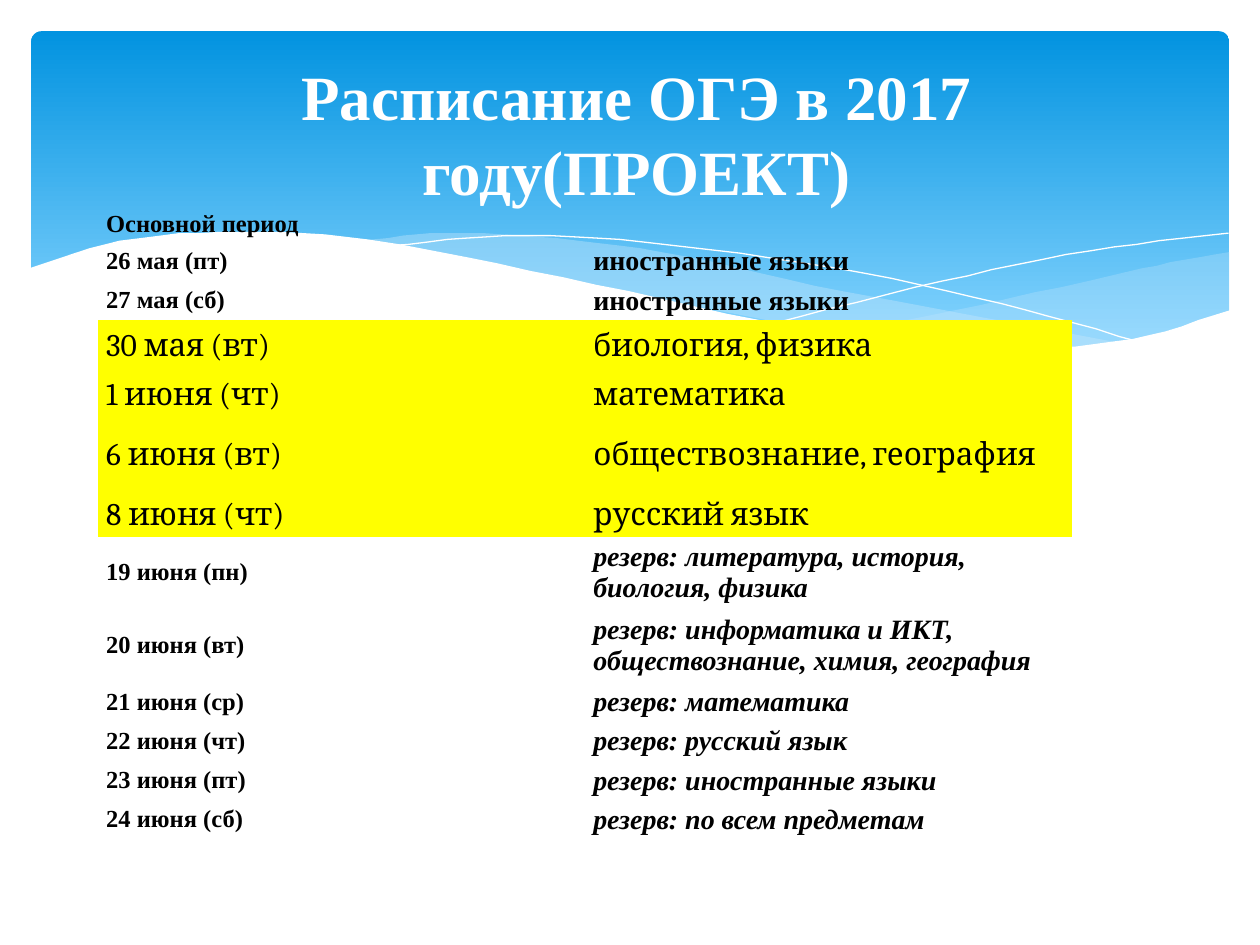
from lxml import etree
from pptx import Presentation
from pptx import util as u
from pptx.dml.color import RGBColor
from pptx.enum import shapes, text
from pptx.oxml.ns import qn

TITLE = "Расписание ОГЭ в 2017 году(ПРОЕКТ)"

# Kind of day, then its dates and subjects
ROWS = [
    ("main", "Основной период", ""),
    ("main", "26 мая (пт)", "иностранные языки"),
    ("main", "27 мая (сб)", "иностранные языки"),
    ("key", "30 мая (вт)", "биология, физика"),
    ("key", "1 июня (чт)", "математика"),
    ("key", "6 июня (вт)", "обществознание, география"),
    ("key", "8 июня (чт)", "русский язык"),
    ("spare", "19 июня (пн)", "резерв: литература, история, биология, физика"),
    ("spare", "20 июня (вт)",
     "резерв: информатика и ИКТ, обществознание, химия, география"),
    ("spare", "21 июня (ср)", "резерв: математика"),
    ("spare", "22 июня (чт)", "резерв: русский язык"),
    ("spare", "23 июня (пт)", "резерв: иностранные языки"),
    ("spare", "24 июня (сб)", "резерв: по всем предметам"),
    ("main", "", ""),
]
LOW = 0.61
TALL = {"30 мая (вт)": 1.07, "6 июня (вт)": 1.52,
        "19 июня (пн)": 1.07, "20 июня (вт)": 1.52}

THEME = {
    "top": "0293E0", "low": "83D3FE", "mist": "C6E7FC", "white": "FFFFFF",
    "ink": "000000", "mark": "FFFF00",
    "serif": "Times New Roman", "accent": "Cambria",
    "title": 36, "date": 14, "topic": 16, "key": 18,
}

# Fill, opacity in percent, line, and smooth edges through a few knots
UNIT = u.Cm(0.0254)
WAVES = [
    ("mist", 29, None, [
        [(661, 265), (779, 242), (906, 213), (976, 200)],
        [(976, 247), (889, 272), (803, 278), (661, 265)]]),
    ("mist", 40, None, [
        [(286, 191), (353, 185), (442, 189), (541, 203), (668, 231), (893, 273)],
        [(893, 273), (796, 278), (695, 270), (449, 222), (286, 191)]]),
    (None, 0, "white", [
        [(309, 195), (401, 187), (510, 192), (665, 213), (795, 241), (907, 272)]]),
    (None, 0, "white", [[(613, 257), (748, 223), (866, 199), (975, 185)]]),
    ("white", 100, None, [
        [(23, 213), (95, 191), (190, 184), (292, 190), (447, 220),
         (603, 254), (726, 272), (809, 277), (899, 269), (977, 246)],
        [(977, 329), (23, 329)]]),
]


def tint(name):
    return RGBColor.from_string(THEME[name])


def smooth(knots, steps=6):
    """Points of a Hermite curve y(x) through the knots."""
    last = len(knots) - 1
    if last == 1:
        return knots
    slopes = []
    for i in range(last + 1):
        (ax, ay), (bx, by) = knots[max(i - 1, 0)], knots[min(i + 1, last)]
        slopes.append((by - ay) / (bx - ax))
    points = [knots[0]]
    for i in range(last):
        (ax, ay), (bx, by) = knots[i], knots[i + 1]
        run, rise = bx - ax, by - ay
        start, end = slopes[i] * run, slopes[i + 1] * run
        for n in range(1, steps + 1):
            t = n / steps
            y = (ay + start * t + (3 * rise - 2 * start - end) * t ** 2
                 + (start + end - 2 * rise) * t ** 3)
            points.append((ax + run * t, y))
    return points


def put(frame, words, *, size, font="serif", color="ink", bold=False,
        slant=False, align=None):
    para = frame.paragraphs[0]
    para.alignment = align
    run = para.add_run()
    run.text = words
    face = run.font
    face.name, face.size = THEME[font], u.Pt(THEME[size])
    face.bold, face.italic = bold, slant
    face.color.rgb = tint(color)


def draw_sky(slide):
    sky = slide.shapes.add_shape(
        shapes.MSO_SHAPE.ROUNDED_RECTANGLE,
        u.Cm(0.63), u.Cm(0.63), u.Cm(24.15), u.Cm(6.86))
    sky.adjustments[0] = 0.03
    sky.shadow.inherit = False
    sky.line.fill.background()
    sky.fill.gradient()
    sky.fill.gradient_angle = 270
    for stop, name, place in zip(sky.fill.gradient_stops, ("top", "low"), (0, 0.9)):
        stop.color.rgb = tint(name)
        stop.position = place


def draw_wave(slide, fill, alpha, line, edges):
    points = [point for edge in edges for point in smooth(edge)]
    pen = slide.shapes.build_freeform(*points[0], scale=UNIT)
    pen.add_line_segments(points[1:], close=fill is not None)
    wave = pen.convert_to_shape()
    wave.shadow.inherit = False
    if fill:
        wave.fill.solid()
        wave.fill.fore_color.rgb = tint(fill)
        hue = wave.fill._xPr.find(".//" + qn("a:srgbClr"))
        etree.SubElement(hue, qn("a:alpha"), val=str(alpha * 1000))
    else:
        wave.fill.background()
    if line:
        wave.line.color.rgb = tint(line)
        wave.line.width = u.Pt(0)
    else:
        wave.line.fill.background()


def draw_table(slide):
    high = u.Cm(13.92)
    frame = slide.shapes.add_table(
        len(ROWS), 2, u.Cm(1.98), u.Cm(4.17), u.Cm(19.64), high)
    table = frame.table
    table.first_row = table.horz_banding = False
    style = table._tbl.tblPr.find(qn("a:tableStyleId"))
    style.text = "{2D5ABB26-0587-4C30-8999-92F81FD0307C}"  # no style, no grid
    for row, (kind, date, topic) in zip(table.rows, ROWS):
        row.height = u.Cm(TALL.get(date, LOW))
        key = kind == "key"
        for cell, words, size in zip(row.cells, (date, topic), ("date", "topic")):
            cell.vertical_anchor = text.MSO_ANCHOR.MIDDLE
            cell.margin_left = cell.margin_right = u.Cm(0.16)
            cell.margin_top = cell.margin_bottom = u.Cm(0.08)
            if key:
                cell.fill.solid()
                cell.fill.fore_color.rgb = tint("mark")
            else:
                cell.fill.background()
            if words:
                put(cell.text_frame, words, size="key" if key else size,
                    font="accent" if key else "serif", bold=not key,
                    slant=kind == "spare" and size == "topic")
        if not topic:
            row.cells[0].merge(row.cells[1])
    frame.height = high


def set_title(slide):
    title = slide.shapes.title
    title.left, title.top = u.Cm(1.4), u.Cm(1.19)
    title.width, title.height = u.Cm(22.86), u.Cm(2.97)
    frame = title.text_frame
    frame.word_wrap = True
    frame.auto_size = text.MSO_AUTO_SIZE.NONE
    frame.vertical_anchor = text.MSO_ANCHOR.MIDDLE
    put(frame, TITLE, size="title", color="white", bold=True,
        align=text.PP_ALIGN.CENTER)
    slide.shapes._spTree.append(title._element)  # bring to front


def main():
    deck = Presentation()
    deck.slide_width, deck.slide_height = u.Cm(25.4), u.Cm(19.05)
    slide = deck.slides.add_slide(deck.slide_layouts[5])
    draw_sky(slide)
    for wave in WAVES:
        draw_wave(slide, *wave)
    draw_table(slide)
    set_title(slide)
    deck.save("out.pptx")


if __name__ == "__main__":
    main()
